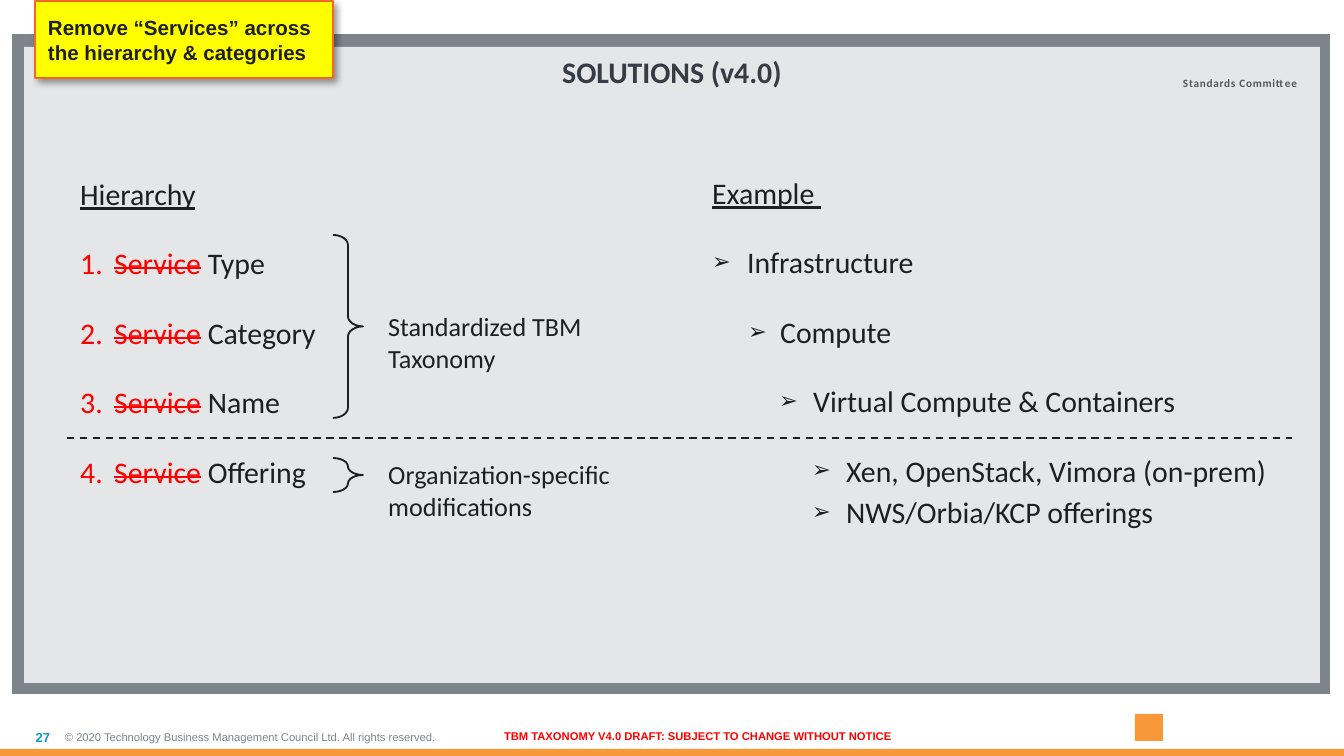
from dataclasses import dataclass

from lxml import etree
from pptx import Presentation
from pptx import util as u
from pptx.dml.color import RGBColor
from pptx.enum import dml, shapes, text
from pptx.oxml.ns import qn


@dataclass(frozen=True)
class Theme:
    ink: str = "1E1F21"
    heading: str = "353C45"
    gray: str = "7E848B"
    committee: str = "53565C"
    panel: str = "E5E6E8"
    red: str = "FF0000"
    blue: str = "0D96C9"
    yellow: str = "FFFF00"
    orange: str = "F89838"
    note_edge: str = "F26724"
    body_font: str = "Calibri"
    footer_font: str = "Arial"
    body: int = 16
    label: int = 14
    note: int = 11
    number: int = 7
    small: int = 6


T = Theme()
PX = u.Inches(10) / 1344
INSET = 13  # px, side inset of the note

# Content
TITLE = "SOLUTIONS (v4.0)"
NOTE = ["Remove “Services” across", "the hierarchy & categories"]
STRUCK = "Service"
LEVELS = ["Type", "Category", "Name", "Offering"]
# text, level, left margin px, hanging px, space before pt
EXAMPLES = [
    ("Infrastructure", 0, 35, 35, 18),
    ("Compute", 1, 68, 32, 18),
    ("Virtual Compute & Containers", 2, 101, 34, 18),
    ("Xen, OpenStack, Vimora (on-prem)", 3, 134, 34, 18),
    ("NWS/Orbia/KCP offerings", 3, 134, 34, 3),
]
# label, label top, label width, brace top, brace height
SCOPES = [
    ("Standardized TBM Taxonomy", 304, 324, 235, 183),
    ("Organization-specific modifications", 452, 359, 458, 34),
]
COPYRIGHT = "© 2020 Technology Business Management Council Ltd. All rights reserved."
DRAFT = "TBM TAXONOMY V4.0 DRAFT: SUBJECT TO CHANGE WITHOUT NOTICE"


def px(n):
    return round(n * PX)


def rgb(color):
    return RGBColor.from_string(color)


def child(parent, tag, **attrs):
    return etree.SubElement(parent, qn(tag), {k: str(v) for k, v in attrs.items()})


def add_run(para, words, size, color, font=T.body_font, bold=False):
    run = para.add_run()
    run.text = words
    run.font.size, run.font.name, run.font.bold = u.Pt(size), font, bold
    run.font.color.rgb = rgb(color)
    return run


def add_shape(kind, box, fill=None, line=None, width=1):
    shape = slide.shapes.add_shape(kind, *map(px, box))
    shape.shadow.inherit = False
    if fill:
        shape.fill.solid()
        shape.fill.fore_color.rgb = rgb(fill)
    else:
        shape.fill.background()
    if line:
        shape.line.color.rgb = rgb(line)
        shape.line.width = u.Pt(width)
    else:
        shape.line.fill.background()
    return shape


def add_text(box, inset=True, wrap=True, anchor=text.MSO_ANCHOR.TOP):
    frame = slide.shapes.add_textbox(*map(px, box)).text_frame
    frame.word_wrap, frame.vertical_anchor = wrap, anchor
    if not inset:
        frame.margin_left = frame.margin_right = 0
        frame.margin_top = frame.margin_bottom = 0
    return frame


def add_item(frame, margin, hanging, before, bullet, level=0, **bullet_format):
    para = frame.add_paragraph()
    para.level = level
    props = para._p.get_or_add_pPr()
    props.set("marL", str(px(margin)))
    props.set("indent", str(-px(hanging)))
    if "color" in bullet_format:
        child(child(props, "a:buClr"), "a:srgbClr", val=bullet_format["color"])
    if "percent" in bullet_format:
        child(props, "a:buSzPct", val=bullet_format["percent"] * 1000)
    child(props, "a:buFont", typeface=bullet_format["font"])
    child(props, bullet[0], **bullet[1])
    para.space_before = u.Pt(before)
    return para


prs = Presentation()
prs.slide_width, prs.slide_height = px(1344), px(756)
slide = prs.slides.add_slide(prs.slide_layouts[6])
RECT, MIDDLE = shapes.MSO_SHAPE.RECTANGLE, text.MSO_ANCHOR.MIDDLE

# Footer: copyright, page number, draft notice, plain mark, bottom band
frame = add_text((65, 718, 452, 39), inset=False, anchor=MIDDLE)
add_run(frame.paragraphs[0], COPYRIGHT, T.small, T.gray, T.footer_font)
frame = add_text((0, 718, 50, 39), inset=False, anchor=MIDDLE)
frame.paragraphs[0].alignment = text.PP_ALIGN.RIGHT
add_run(frame.paragraphs[0], "27", T.number, T.blue, T.footer_font, True)
add_shape(RECT, (1135, 714, 28, 27), T.orange)
add_shape(RECT, (0, 749, 1344, 9), T.orange)
frame = add_text((501, 730, 393, 13), inset=False, wrap=False, anchor=MIDDLE)
frame.paragraphs[0].alignment = text.PP_ALIGN.CENTER
add_run(frame.paragraphs[0], DRAFT, T.small, T.red, T.footer_font, True)

# Framed panel with title
add_shape(RECT, (12, 34, 1318, 660), T.gray)
frame = add_shape(RECT, (24, 47, 1296, 636), T.panel).text_frame
frame.vertical_anchor = text.MSO_ANCHOR.TOP
frame.paragraphs[0].alignment = text.PP_ALIGN.CENTER
add_run(frame.paragraphs[0], TITLE, T.body, T.heading, bold=True)
frame = add_text((1183, 76, 117, 13), inset=False, wrap=False)
committee = add_run(frame.paragraphs[0], "Standards Committee", T.small, T.committee, bold=True)
committee.font._element.set("spc", "40")

# Hierarchy list
frame = add_text((67, 169, 313, 406))
add_run(frame.paragraphs[0], "Hierarchy", T.body, T.ink).font.underline = True
for level_name in LEVELS:
    para = add_item(frame, 34, 34, 18, ("a:buAutoNum", {"type": "arabicPeriod"}),
                    color=T.red, font=T.body_font)
    struck = add_run(para, STRUCK, T.body, T.red)
    struck.font._element.set("strike", "sngStrike")
    add_run(para, " " + level_name, T.body, T.ink)

# Divider between standard and organization-specific levels
divider = slide.shapes.add_connector(
    shapes.MSO_CONNECTOR.STRAIGHT, px(67), px(438), px(1292), px(438))
divider.line.color.rgb = rgb(T.ink)
divider.line.width = u.Pt(1)
divider.line.dash_style = dml.MSO_LINE.DASH
child(divider._element.spPr, "a:effectLst")

# Note with drop shadow
note = add_shape(RECT, (35, 1, 298, 77), T.yellow, T.note_edge, 0.75)
shadow = child(note._element.spPr.find(qn("a:effectLst")), "a:outerShdw",
               blurRad=u.Pt(4), dist=u.Pt(3), dir=45 * 60000, algn="tl", rotWithShape=0)
child(child(shadow, "a:srgbClr", val="000000"), "a:alpha", val=40000)
frame = note.text_frame
frame.word_wrap, frame.vertical_anchor = False, MIDDLE
frame.margin_left = frame.margin_right = px(INSET)
frame.margin_top = frame.margin_bottom = px(INSET)
for i, words in enumerate(NOTE):
    para = frame.add_paragraph() if i else frame.paragraphs[0]
    para.alignment = text.PP_ALIGN.LEFT
    add_run(para, words, T.note, T.ink, T.footer_font, True)

# Braces and their labels
for label, label_top, label_width, brace_top, brace_height in SCOPES:
    brace = add_shape(shapes.MSO_SHAPE.RIGHT_BRACE,
                      (333, brace_top, 30, brace_height), line=T.ink)
    brace.adjustments[0], brace.adjustments[1] = 0.34, 0.5
    frame = add_text((375, label_top, label_width, 46))
    add_run(frame.paragraphs[0], label, T.label, T.ink)

# Example list
frame = add_text((699, 168, 601, 372))
add_run(frame.paragraphs[0], "Example ", T.body, T.ink).font.underline = True
for words, level, margin, hanging, before in EXAMPLES:
    para = add_item(frame, margin, hanging, before, ("a:buChar", {"char": "➢"}),
                    level, percent=75, font=T.footer_font)
    add_run(para, words, T.body, T.ink)

prs.save("out.pptx")
